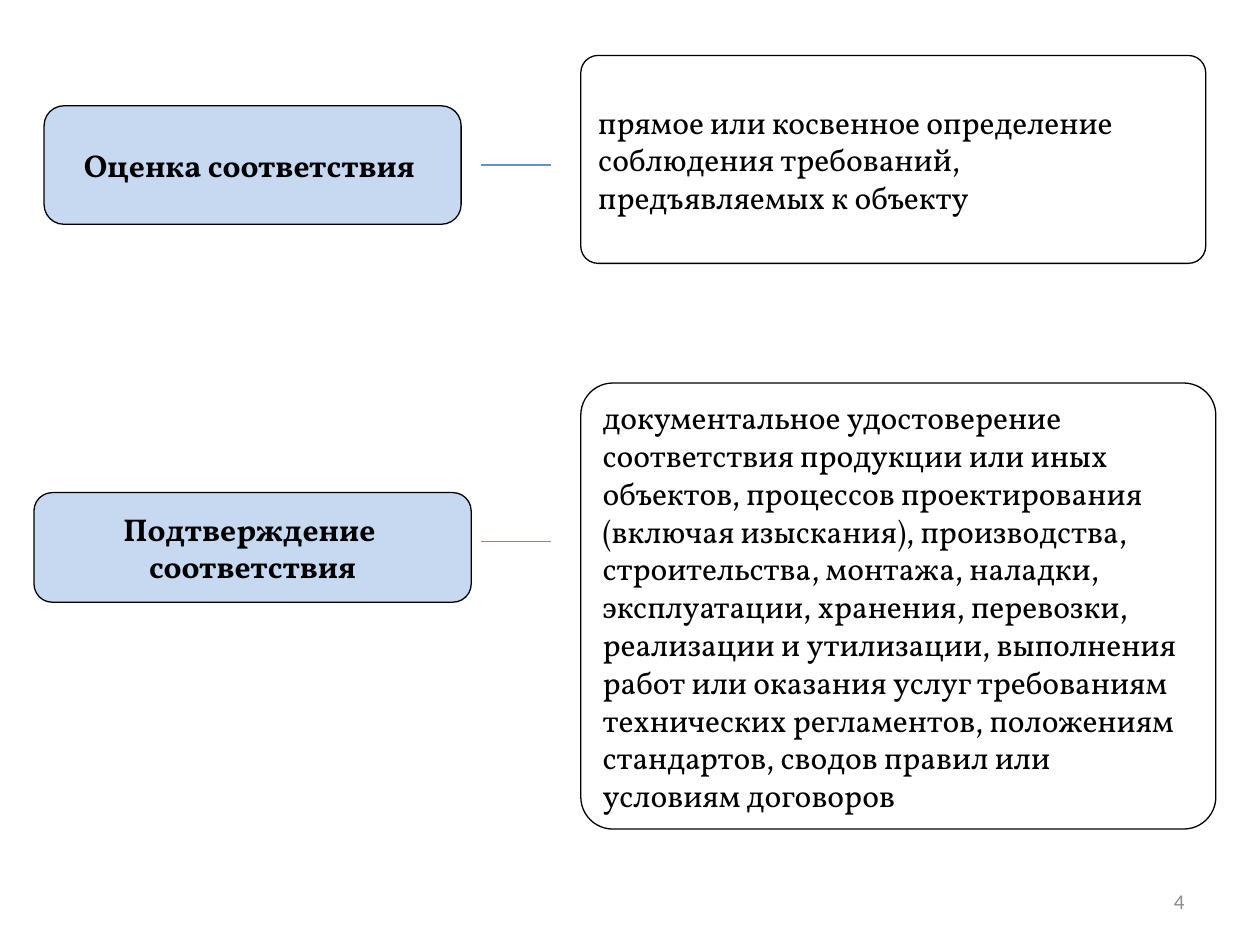
from lxml import etree
from pptx import Presentation
from pptx.dml.color import RGBColor
from pptx.enum.shapes import MSO_CONNECTOR, MSO_SHAPE
from pptx.enum.text import MSO_ANCHOR, PP_ALIGN
from pptx.oxml.ns import qn
from pptx.util import Inches, Pt

ROUNDED = MSO_SHAPE.ROUNDED_RECTANGLE
STRAIGHT = MSO_CONNECTOR.STRAIGHT
MIDDLE = MSO_ANCHOR.MIDDLE
CENTER, JUSTIFY, RIGHT = PP_ALIGN.CENTER, PP_ALIGN.JUSTIFY, PP_ALIGN.RIGHT

BLACK = RGBColor(0x00, 0x00, 0x00)
WHITE = RGBColor(0xFF, 0xFF, 0xFF)
TERM_BLUE = RGBColor(0xC6, 0xD9, 0xF1)
LINK_BLUE = RGBColor(0x65, 0x90, 0xC5)
NUMBER_GRAY = RGBColor(0x8C, 0x8C, 0x8C)

LINE_WIDTH = Pt(0.75)
LINK_LEFT, LINK_RIGHT = 3.82, 4.37

BODY_FONT = {"name": "Vollkorn", "size": Pt(18), "bold": False}
TERM_FONT = {**BODY_FONT, "bold": True}
NUMBER_FONT = {"name": "Calibri", "size": Pt(12)}

# Each row: term box, definition box and the height of the link between them
ROWS = [
    {
        "term": ["Оценка соответствия "],
        "term_box": (0.35, 0.84, 3.31, 0.94),
        "definition": [
            "прямое или косвенное определение ",
            "соблюдения требований, ",
            "предъявляемых к объекту",
        ],
        "definition_box": (4.61, 0.44, 4.96, 1.65),
        "corner": 0.083,
        "link_y": 1.31,
    },
    {
        "term": ["Подтверждение ", "соответствия"],
        "term_box": (0.27, 3.91, 3.47, 0.87),
        "definition": [
            "документальное удостоверение ",
            "соответствия продукции или иных ",
            "объектов, процессов проектирования",
            "(включая изыскания), производства, ",
            "строительства, монтажа, наладки, ",
            "эксплуатации, хранения, перевозки, ",
            "реализации и утилизации, выполнения ",
            "работ или оказания услуг требованиям ",
            "технических регламентов, положениям ",
            "стандартов, сводов правил или ",
            "условиям договоров ",
        ],
        "definition_box": (4.61, 3.04, 5.04, 3.54),
        "corner": 0.072,
        "link_y": 4.3,
    },
]


def write_lines(frame, lines, alignment, font_format, color):
    frame.vertical_anchor = MIDDLE
    for index, line in enumerate(lines):
        paragraph = frame.paragraphs[0] if index == 0 else frame.add_paragraph()
        paragraph.alignment = alignment
        run = paragraph.add_run()
        run.text = line
        for attribute, value in font_format.items():
            setattr(run.font, attribute, value)
        run.font.color.rgb = color


def add_box(slide, box, corner, fill, lines, alignment, font_format):
    panel = slide.shapes.add_shape(ROUNDED, *map(Inches, box))
    panel.adjustments[0] = corner
    panel.shadow.inherit = False
    panel.fill.solid()
    panel.fill.fore_color.rgb = fill
    panel.line.color.rgb = BLACK
    panel.line.width = LINE_WIDTH
    panel.text_frame.word_wrap = False
    write_lines(panel.text_frame, lines, alignment, font_format, BLACK)


def add_link(slide, y):
    link = slide.shapes.add_connector(
        STRAIGHT, Inches(LINK_LEFT), Inches(y), Inches(LINK_RIGHT), Inches(y))
    link.line.color.rgb = LINK_BLUE
    link.line.width = LINE_WIDTH
    etree.SubElement(link.element.spPr, qn("a:effectLst"))


def add_page_number(slide, number):
    corner_text = slide.shapes.add_textbox(
        Inches(7.17), Inches(6.95), Inches(2.33), Inches(0.4))
    corner_text.text_frame.word_wrap = True
    write_lines(corner_text.text_frame, [number], RIGHT, NUMBER_FONT, NUMBER_GRAY)


def main():
    deck = Presentation()
    deck.slide_width, deck.slide_height = Inches(10), Inches(7.5)
    slide = deck.slides.add_slide(deck.slide_layouts[6])

    add_page_number(slide, "4")

    # Terms with their definitions
    for row in ROWS:
        add_box(slide, row["term_box"], 0.167, TERM_BLUE,
                row["term"], CENTER, TERM_FONT)
        add_link(slide, row["link_y"])
        add_box(slide, row["definition_box"], row["corner"], WHITE,
                row["definition"], JUSTIFY, BODY_FONT)

    deck.save("out.pptx")


if __name__ == "__main__":
    main()
